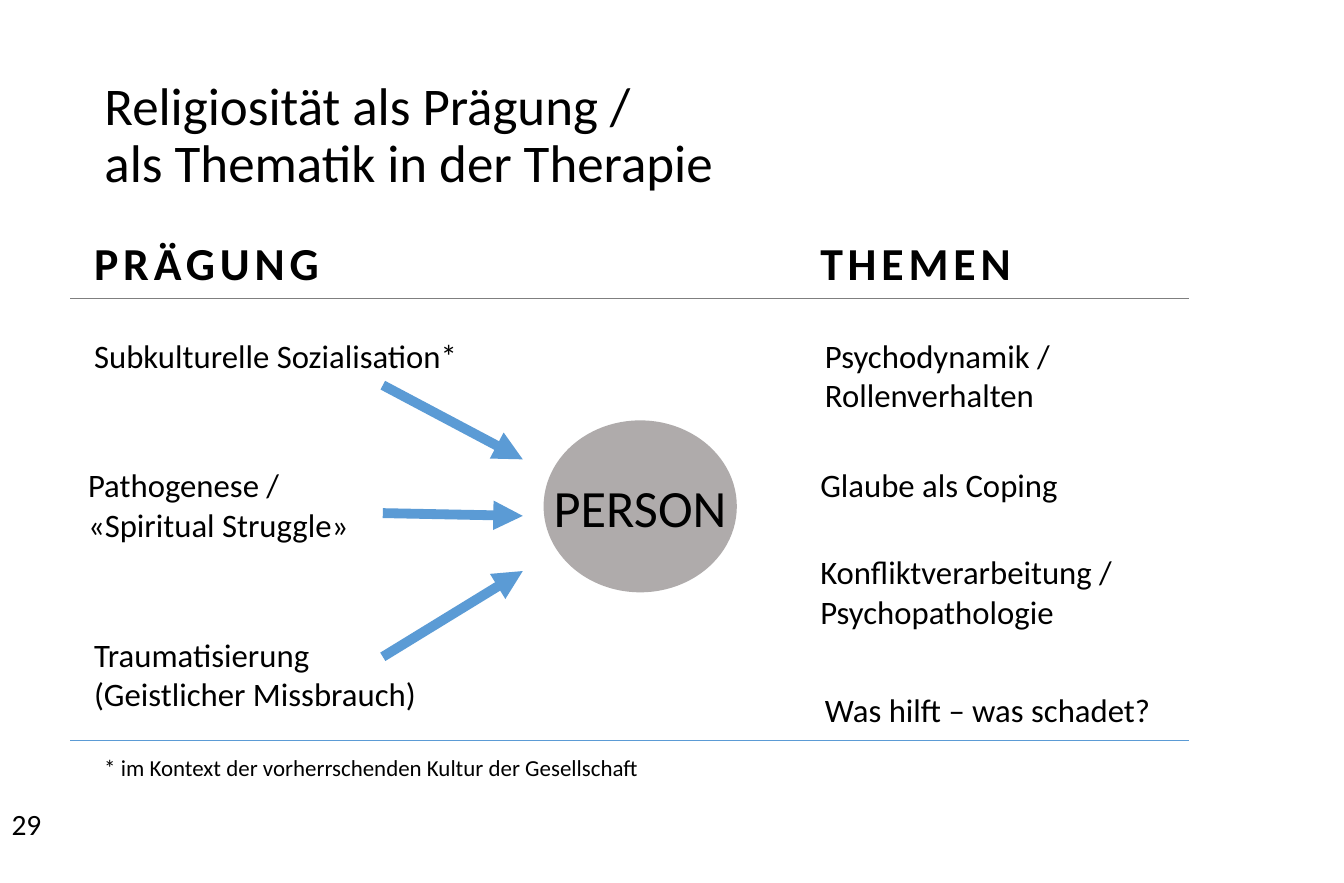
from lxml import etree
from pptx import Presentation
from pptx.dml.color import RGBColor
from pptx.enum.shapes import MSO_CONNECTOR, MSO_SHAPE
from pptx.enum.text import MSO_ANCHOR, MSO_AUTO_SIZE, PP_ALIGN
from pptx.oxml.ns import qn
from pptx.util import Cm, Pt

STRAIGHT = MSO_CONNECTOR.STRAIGHT
OVAL = MSO_SHAPE.OVAL
MIDDLE = MSO_ANCHOR.MIDDLE
NO_FIT = MSO_AUTO_SIZE.NONE
LEFT, CENTER = PP_ALIGN.LEFT, PP_ALIGN.CENTER
TITLE_ONLY = 5


def color(code):
    return RGBColor.from_string(code)


class SlideBuilder:
    font = "Calibri"
    ink = "000000"
    blue = "5B9BD5"
    gray = "7F7F7F"
    person_fill = "AFABAB"

    def __init__(self, page):
        self.page = page

    def format_text(self, frame, size, align=LEFT, bold=False, spacing=0):
        for para in frame.paragraphs:
            para.alignment = align
            for span in para.runs:
                span.font.name = self.font
                span.font.size = Pt(size)
                span.font.bold = bold
                span.font.color.rgb = color(self.ink)
                if spacing:
                    span.font._element.set("spc", str(spacing * 100))

    def title(self, text, left, top, width, height):
        box = self.page.shapes.title
        box.left, box.top = Cm(left), Cm(top)
        box.width, box.height = Cm(width), Cm(height)
        frame = box.text_frame
        frame.text = text
        frame.word_wrap = True
        frame.auto_size = NO_FIT
        frame.vertical_anchor = MIDDLE
        frame.paragraphs[0].line_spacing = 0.9
        self.format_text(frame, 32.4)

    def text(self, text, left, top, width, height, size=20, **style):
        box = self.page.shapes.add_textbox(Cm(left), Cm(top), Cm(width), Cm(height))
        frame = box.text_frame
        frame.word_wrap = True
        frame.text = text
        self.format_text(frame, size, **style)

    def circle(self, text, left, top, width, height):
        shape = self.page.shapes.add_shape(OVAL, Cm(left), Cm(top), Cm(width), Cm(height))
        shape.shadow.inherit = False
        shape.fill.solid()
        shape.fill.fore_color.rgb = color(self.person_fill)
        shape.line.fill.background()
        frame = shape.text_frame
        frame.word_wrap = False
        frame.vertical_anchor = MIDDLE
        frame.text = text
        self.format_text(frame, 32, align=CENTER)

    def line(self, start_x, start_y, end_x, end_y, code, width):
        line = self.page.shapes.add_connector(
            STRAIGHT, Cm(start_x), Cm(start_y), Cm(end_x), Cm(end_y))
        line.line.color.rgb = color(code)
        line.line.width = Pt(width)
        etree.SubElement(line._element.spPr, qn("a:effectLst"))
        return line

    def arrow(self, start_x, start_y, end_x, end_y):
        arrow = self.line(start_x, start_y, end_x, end_y, self.blue, 6)
        outline = arrow.line._get_or_add_ln()
        etree.SubElement(outline, qn("a:tailEnd"), type="triangle")


def main():
    deck = Presentation()
    deck.slide_width, deck.slide_height = Cm(29), Cm(19.05)
    page = deck.slides.add_slide(deck.slide_layouts[TITLE_ONLY])
    builder = SlideBuilder(page)

    builder.title("Religiosität als Prägung /\vals Thematik in der Therapie",
                  2, 1.8, 22.86, 2.29)
    builder.text("29", 0, 17.27, 3.12, 1.4, size=18)
    builder.circle("PERSON", 11.73, 9.07, 4.17, 3.71)

    for heading, left in (("PRÄGUNG", 1.78), ("THEMEN", 17.45)):
        builder.text(heading, left, 4.93, 10.2, 1.5, size=28, bold=True, spacing=3)

    topics = [
        ("Subkulturelle Sozialisation*", 1.78, 7.11),
        ("Pathogenese /\v«Spiritual Struggle»", 1.65, 9.91),
        ("Traumatisierung\n(Geistlicher Missbrauch)", 1.78, 13.56),
        ("Psychodynamik / Rollenverhalten", 17.55, 7.11),
        ("Glaube als Coping", 17.45, 9.91),
        ("Konfliktverarbeitung / Psychopathologie", 17.45, 11.79),
        ("Was hilft – was schadet?", 17.55, 14.76),
    ]
    for topic, left, top in topics:
        height = 1.12 if top == 7.11 and left < 10 else 1.96
        if topic in ("Glaube als Coping", "Was hilft – was schadet?"):
            height = 1.12
        builder.text(topic, left, top, 9.5, height)

    for start_y, end_y in ((8.31, 9.91), (11.07, 11.13), (14.17, 12.32)):
        builder.arrow(8.26, start_y, 11.28, end_y)

    for y, code in ((6.43, builder.gray), (15.98, builder.blue)):
        builder.line(1.52, y, 25.65, y, code, 0.5)

    builder.text("* im Kontext der vorherrschenden Kultur der Gesellschaft",
                 2, 16.13, 19.3, 0.86, size=14)
    deck.save("out.pptx")


if __name__ == "__main__":
    main()
